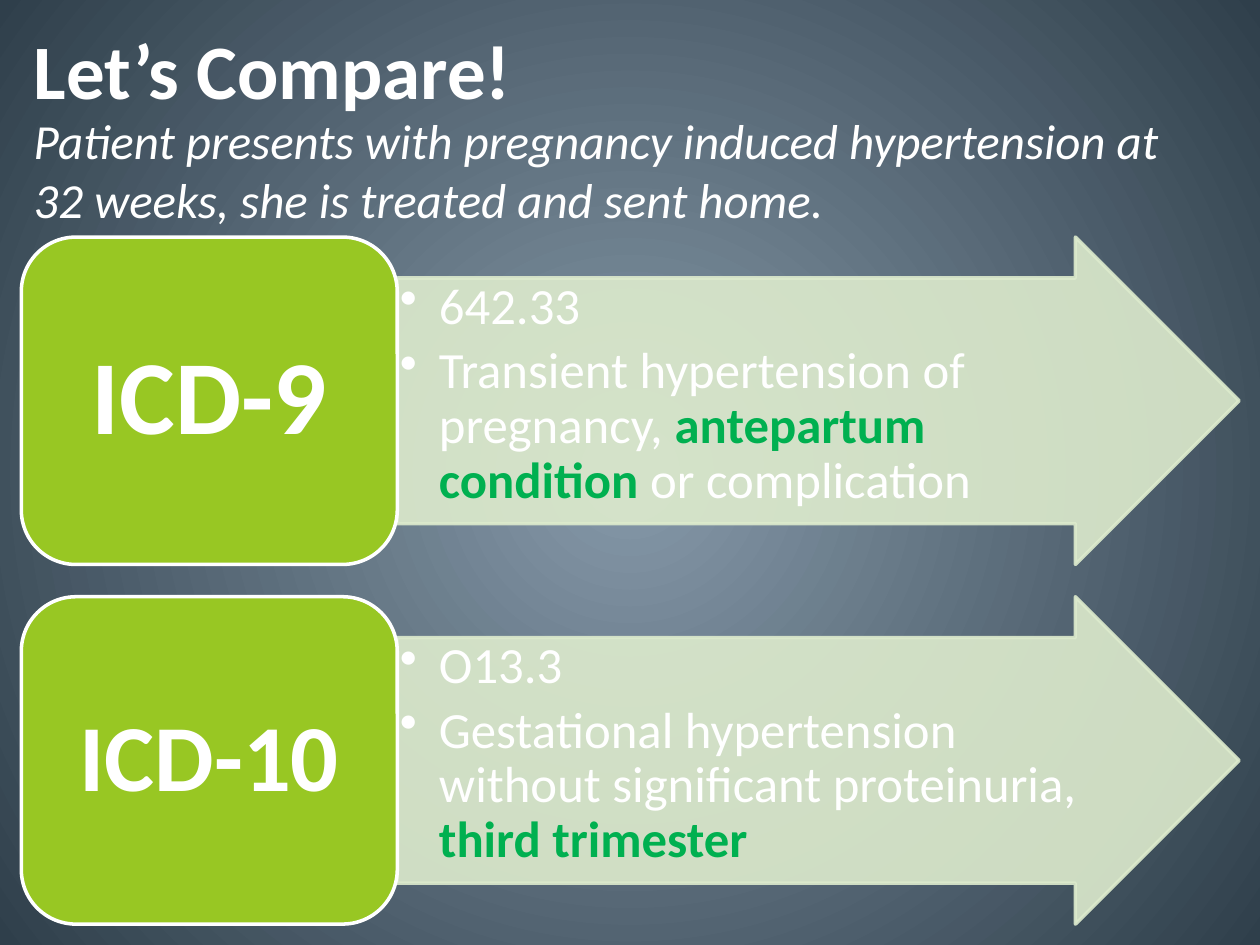
from dataclasses import dataclass

from lxml import etree
from pptx import Presentation
from pptx import util as u
from pptx.dml.color import RGBColor
from pptx.enum import shapes, text
from pptx.oxml import ns


@dataclass(frozen=True)
class Theme:
    font: str = "Calibri"
    white: str = "FFFFFF"
    tile: str = "98C723"
    arrow: str = "DDEBCD"
    emphasis: str = "00B050"
    glow: str = "8699A9"
    edge: str = "2F3F4B"
    title_size: int = 44
    case_size: int = 28
    detail_size: int = 29
    outline: int = 2
    arrow_opacity: int = 90


@dataclass(frozen=True)
class Coding:
    label: str
    label_size: int
    label_inset: float
    code: str
    description: tuple  # (words, emphasised) pairs


THEME = Theme()

CODINGS = [
    Coding("ICD-9", 60, 0.64, "642.33", (
        ("Transient hypertension of pregnancy, ", False),
        ("antepartum condition ", True),
        ("or complication", False),
    )),
    Coding("ICD-10", 54, 0.58, "O13.3", (
        ("Gestational hypertension without significant proteinuria, ", False),
        ("third trimester", True),
    )),
]

# Row geometry in centimetres
ROW_TOP, ROW_PITCH, ROW_HEIGHT = 4.78, 7.25, 6.6
TILE_LEFT, TILE_WIDTH = 0.43, 7.58
ARROW_LEFT, ARROW_WIDTH = 8.01, 16.97


def rgb(value: str) -> RGBColor:
    return RGBColor.from_string(value)


def style(run, size: int, color: str = THEME.white,
          bold: bool = False, italic: bool = False) -> None:
    font = run.font
    font.name, font.size = THEME.font, u.Pt(size)
    font.bold, font.italic = bold, italic
    font.color.rgb = rgb(color)


def set_insets(frame, across: float, down: float) -> None:
    frame.margin_left = frame.margin_right = u.Cm(across)
    frame.margin_top = frame.margin_bottom = u.Cm(down)


def paint_background(slide) -> None:
    fill = slide.background.fill
    fill.gradient()
    for stop, color, position in zip(fill.gradient_stops, (THEME.glow, THEME.edge), (0, 1)):
        stop.color.rgb = rgb(color)
        stop.position = position
    # Turn the linear gradient into a circular one around the centre
    linear = next(slide.background.fill._xPr.iter(ns.qn("a:lin")))
    circle = etree.Element(ns.qn("a:path"), {"path": "circle"})
    etree.SubElement(circle, ns.qn("a:fillToRect"), dict.fromkeys("ltrb", "50000"))
    linear.getparent().replace(linear, circle)


def add_heading(slide, top: float, width: float, height: float, words: str,
                size: int, anchor, **emphasis: bool) -> None:
    box = slide.shapes.add_textbox(u.Cm(TILE_LEFT), u.Cm(top), u.Cm(width), u.Cm(height))
    frame = box.text_frame
    frame.word_wrap = True
    frame.vertical_anchor = anchor
    frame.text = words
    style(frame.paragraphs[0].runs[0], size, **emphasis)


def add_block(slide, kind, left: float, top: float, width: float, fill: str, line: str):
    block = slide.shapes.add_shape(kind, u.Cm(left), u.Cm(top), u.Cm(width), u.Cm(ROW_HEIGHT))
    block.shadow.inherit = False
    block.fill.solid()
    block.fill.fore_color.rgb = rgb(fill)
    block.line.color.rgb = rgb(line)
    block.line.width = u.Pt(THEME.outline)
    block.text_frame.word_wrap = True
    return block


def add_bullet(paragraph) -> None:
    paragraph.level = 1
    paragraph.alignment = text.PP_ALIGN.LEFT
    paragraph.line_spacing = 0.9
    paragraph.space_after = u.Pt(5.3)
    properties = paragraph._p.get_or_add_pPr()
    properties.set("marL", str(u.Cm(0.79)))
    properties.set("indent", str(-u.Cm(0.79)))
    etree.SubElement(properties, ns.qn("a:buChar"), {"char": "•"})


def add_arrow(slide, coding: Coding, top: float) -> None:
    arrow = add_block(slide, shapes.MSO_SHAPE.RIGHT_ARROW, ARROW_LEFT, top,
                      ARROW_WIDTH, THEME.arrow, THEME.arrow)
    arrow.adjustments[0], arrow.adjustments[1] = 0.75, 0.5
    # Fill and outline share the same transparency
    for color in arrow._element.spPr.iter(ns.qn("a:srgbClr")):
        etree.SubElement(color, ns.qn("a:alpha"), {"val": str(THEME.arrow_opacity * 1000)})

    frame = arrow.text_frame
    set_insets(frame, 0.05, 0.05)
    frame.vertical_anchor = text.MSO_ANCHOR.TOP
    frame.text = coding.code
    code, description = frame.paragraphs[0], frame.add_paragraph()
    style(code.runs[0], THEME.detail_size)
    for words, emphasised in coding.description:
        run = description.add_run()
        run.text = words
        style(run, THEME.detail_size,
              THEME.emphasis if emphasised else THEME.white, bold=emphasised)
    for paragraph in (code, description):
        add_bullet(paragraph)


def add_tile(slide, coding: Coding, top: float) -> None:
    tile = add_block(slide, shapes.MSO_SHAPE.ROUNDED_RECTANGLE, TILE_LEFT, top,
                     TILE_WIDTH, THEME.tile, THEME.white)
    frame = tile.text_frame
    set_insets(frame, coding.label_inset, coding.label_inset / 2)
    frame.vertical_anchor = text.MSO_ANCHOR.MIDDLE
    frame.text = coding.label
    label = frame.paragraphs[0]
    label.alignment = text.PP_ALIGN.CENTER
    label.line_spacing = 0.9
    style(label.runs[0], coding.label_size, bold=True)


def main() -> None:
    deck = Presentation()
    deck.slide_width, deck.slide_height = u.Cm(25.4), u.Cm(19.05)
    slide = deck.slides.add_slide(deck.slide_layouts[6])
    paint_background(slide)

    # One row per coding system
    for row, coding in enumerate(CODINGS):
        top = ROW_TOP + row * ROW_PITCH
        add_arrow(slide, coding, top)
        add_tile(slide, coding, top)

    # Patient case and title
    add_heading(slide, 2.11, 23.7, 2.64,
                "Patient presents with pregnancy induced hypertension at 32 weeks, "
                "she is treated and sent home.",
                THEME.case_size, text.MSO_ANCHOR.TOP, italic=True)
    add_heading(slide, -0.2, 22.86, 3.18, "Let’s Compare!",
                THEME.title_size, text.MSO_ANCHOR.MIDDLE, bold=True)

    deck.save("out.pptx")


if __name__ == "__main__":
    main()
